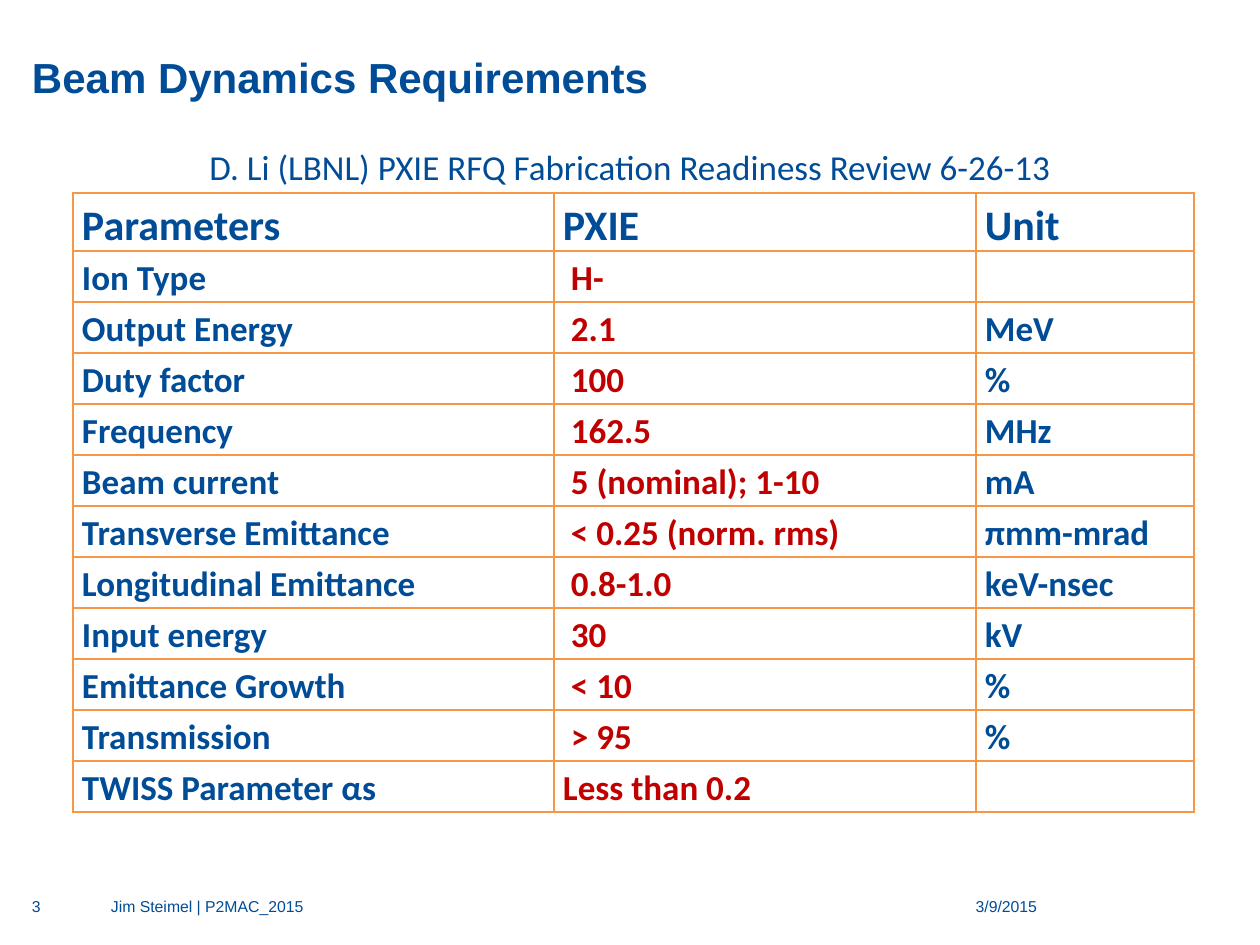
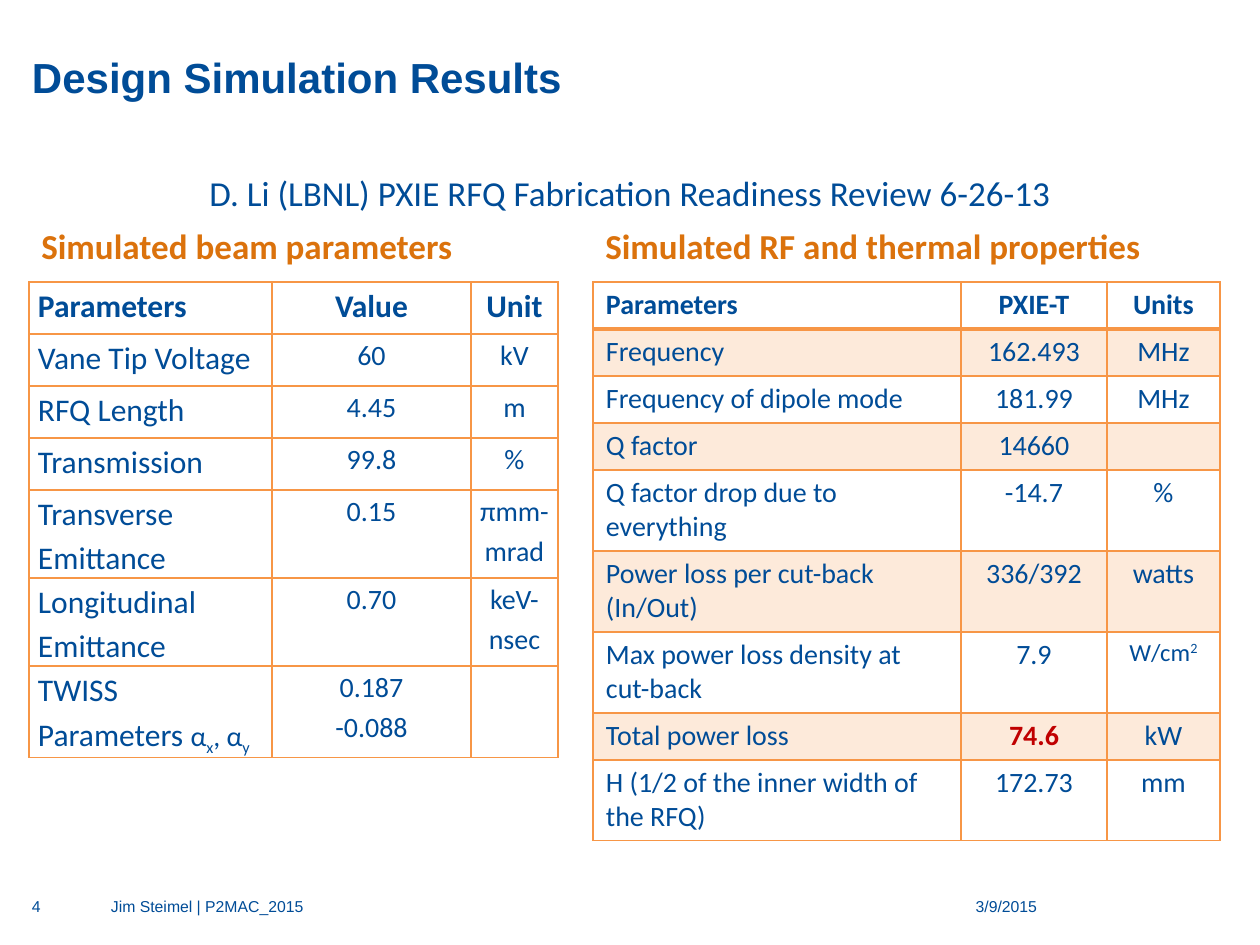
import pptx
import pptx.util
import pptx.dml.color
import pptx.enum.text
import pptx.oxml
import pptx.oxml.ns

PX = 914400 / 126
HUES = {"blue": "004C97", "red": "C00000", "rust": "DB720C", "line": "F79646"}
ALIGN = pptx.enum.text.PP_ALIGN
SOURCE = "D. Li (LBNL) PXIE RFQ Fabrication Readiness Review 6-26-13"

NEEDS = [
    ("Parameters", "PXIE", "Unit"),
    ("Ion Type", "H-", ""),
    ("Output Energy", "2.1", "MeV"),
    ("Duty factor", "100", "%"),
    ("Frequency", "162.5", "MHz"),
    ("Beam current", "5 (nominal); 1-10", "mA"),
    ("Transverse Emittance", "< 0.25 (norm. rms)", "πmm-mrad"),
    ("Longitudinal Emittance", "0.8-1.0", "keV-nsec"),
    ("Input energy", "30", "kV"),
    ("Emittance Growth", "< 10", "%"),
    ("Transmission", "> 95", "%"),
    ("TWISS Parameter αs", "Less than 0.2", ""),
]

SMALL = {"size": 16}
SUB = {"size": 16, "base": -25}
TWISS = [("TWISS Parameters ", {}), ("α", SMALL), ("x", SUB), (", α", SMALL), ("y", SUB)]
BEAM = [
    ("Parameters", "Value", "Unit"),
    ("Vane Tip Voltage", "60", "kV"),
    ("RFQ Length", "4.45", "m"),
    ("Transmission", "99.8", "%"),
    ("Transverse Emittance", "0.15", "πmm-mrad"),
    ("Longitudinal Emittance", "0.70", "keV-nsec"),
    ([TWISS], ["0.187", "-0.088"], ""),
]

AREA = [("W/cm", {"size": 14}), ("2", {"size": 14, "base": 30})]
LOSS = [("74.6", {"bold": True, "hue": "red"})]
HEAT = [
    ("Parameters", "PXIE-T", "Units"),
    ("Frequency", "162.493", "MHz"),
    ("Frequency of dipole mode", "181.99", "MHz"),
    ("Q factor", "14660", ""),
    ("Q factor drop due to everything", "-14.7", "%"),
    ("Power loss per cut-back (In/Out)", "336/392", "watts"),
    ("Max power loss density at cut-back", "7.9", [AREA]),
    ("Total power loss", [LOSS], "kW"),
    ("H (1/2 of the inner width of the RFQ)", "172.73", "mm"),
]


def emu(px):
    return pptx.util.Emu(round(px * PX))


def style(run, face="Calibri", size=20, hue="blue", bold=False, base=0):
    font = run.font
    font.name, font.size, font.bold = face, pptx.util.Pt(size), bold
    font.color.rgb = pptx.dml.color.RGBColor.from_string(HUES[hue])
    if base:
        run._r.get_or_add_rPr().set("baseline", str(base * 1000))


def write(frame, text, align=ALIGN.LEFT, space=None, **form):
    """Fill a frame with a string, or a list of strings and run lists."""
    for i, line in enumerate([text] if isinstance(text, str) else text):
        para = frame.add_paragraph() if i else frame.paragraphs[0]
        para.alignment, para.line_spacing = align, space
        for part, extra in [(line, {})] if isinstance(line, str) else line:
            run = para.add_run()
            run.text = part
            style(run, **{**form, **extra})


def clear(frame):
    frame.margin_left = frame.margin_top = frame.margin_right = frame.margin_bottom = 0
    frame.word_wrap = True


def label(slide, box, text, flush=False, **form):
    frame = slide.shapes.add_textbox(*map(emu, box)).text_frame
    if flush:
        clear(frame)
    else:
        frame.word_wrap = False
        frame.auto_size = pptx.enum.text.MSO_AUTO_SIZE.SHAPE_TO_FIT_TEXT
    write(frame, text, **form)


def edge(cell, widths):
    """Draw left, right, top and bottom borders, widths in points."""
    props = cell._tc.get_or_add_tcPr()
    for i, (side, width) in enumerate(zip("LRTB", widths)):
        props.insert(i, pptx.oxml.parse_xml(
            f'<a:ln{side} {pptx.oxml.ns.nsdecls("a")} w="{width * 12700}"><a:solidFill>'
            f'<a:srgbClr val="{HUES["line"]}"/></a:solidFill></a:ln{side}>'))


def tint(cell):
    cell.fill.solid()
    cell.fill.fore_color.rgb = pptx.dml.color.RGBColor.from_string(HUES["line"])
    color = cell._tc.tcPr.find(".//" + pptx.oxml.ns.qn("a:srgbClr"))
    color.append(pptx.oxml.parse_xml(f'<a:alpha {pptx.oxml.ns.nsdecls("a")} val="20000"/>'))


def grid(slide, spot, cols, rows, data, look, pad=(9, 0), band=False):
    """Place a table; look(row, col) gives the text format of a cell."""
    box = (*spot, sum(cols), sum(rows))
    table = slide.shapes.add_table(len(rows), len(cols), *map(emu, box)).table
    table.first_row = table.horz_banding = False
    for col, width in zip(table.columns, cols):
        col.width = emu(width)
    for r, (height, line) in enumerate(zip(rows, data)):
        table.rows[r].height = emu(height)
        for c, text in enumerate(line):
            cell = table.cell(r, c)
            form = look(r, c)
            side, rise = pad
            cell.margin_left = emu(side + form.pop("shift", 0))
            cell.margin_right = emu(side)
            cell.margin_top = cell.margin_bottom = emu(rise if text else 0)
            if text:
                write(cell.text_frame, text, **form)
            if band and r % 2:
                tint(cell)
            else:
                cell.fill.background()
            edge(cell, (1, 1, 2 if band and r == 1 else 1, 2 if band and r == 0 else 1))


def need_look(r, c):
    value = r > 0 and c == 1
    return {"size": 20 if r else 24, "bold": True, "space": 1.15,
            "hue": "red" if value else "blue",
            "shift": 8 if value and r < len(NEEDS) - 1 else 0}


def beam_look(r, c):
    align = ALIGN.CENTER if c else ALIGN.JUSTIFY if r == len(BEAM) - 1 else ALIGN.LEFT
    return {"size": 16 if r and c else 18, "bold": r == 0, "space": 1.15, "align": align}


def heat_look(r, c):
    return {"size": 16, "bold": r == 0, "align": ALIGN.CENTER if c else ALIGN.LEFT}


def start(deck, title, number):
    """Add a slide with its title and footer."""
    slide = deck.slides.add_slide(deck.slide_layouts[5])
    head = slide.shapes.title
    head.left, head.top, head.width, head.height = map(emu, (32, 14, 1197, 88))
    clear(head.text_frame)
    head.text_frame.auto_size = pptx.enum.text.MSO_AUTO_SIZE.NONE
    head.text_frame.vertical_anchor = pptx.enum.text.MSO_ANCHOR.BOTTOM
    write(head.text_frame, title, face="Arial", size=24, bold=True)
    for left, width, text, align in (
            (888, 149, "3/9/2015", ALIGN.RIGHT),
            (111, 741, "Jim Steimel | P2MAC_2015", ALIGN.LEFT),
            (32, 62, str(number), ALIGN.LEFT)):
        label(slide, (left, 897, width, 33), text, flush=True, align=align,
              face="Arial", size=9)
    return slide


def needs(deck):
    slide = start(deck, "Beam Dynamics Requirements", 3)
    grid(slide, (73, 193), (481, 422, 218), [58] + [51] * 11, NEEDS, need_look)
    label(slide, (197, 139, 874, 55), SOURCE)


def results(deck):
    slide = start(deck, "Design Simulation Results", 4)
    grid(slide, (29, 282), (243, 199, 87), [52] * 4 + [88, 88, 91], BEAM, beam_look)
    grid(slide, (593, 282), (368, 146, 113), [47] * 4 + [81] * 3 + [47, 81],
         HEAT, heat_look, pad=(13, 6), band=True)
    for left, width, text in ((29, 440, "Simulated beam parameters"),
                              (593, 564, "Simulated RF and thermal properties")):
        label(slide, (left, 218, width, 55), text, hue="rust", bold=True)
    label(slide, (197, 165, 874, 55), SOURCE)


def main():
    deck = pptx.Presentation()
    deck.slide_width, deck.slide_height = emu(1260), emu(945)
    needs(deck)
    results(deck)
    deck.save("out.pptx")


if __name__ == "__main__":
    main()
